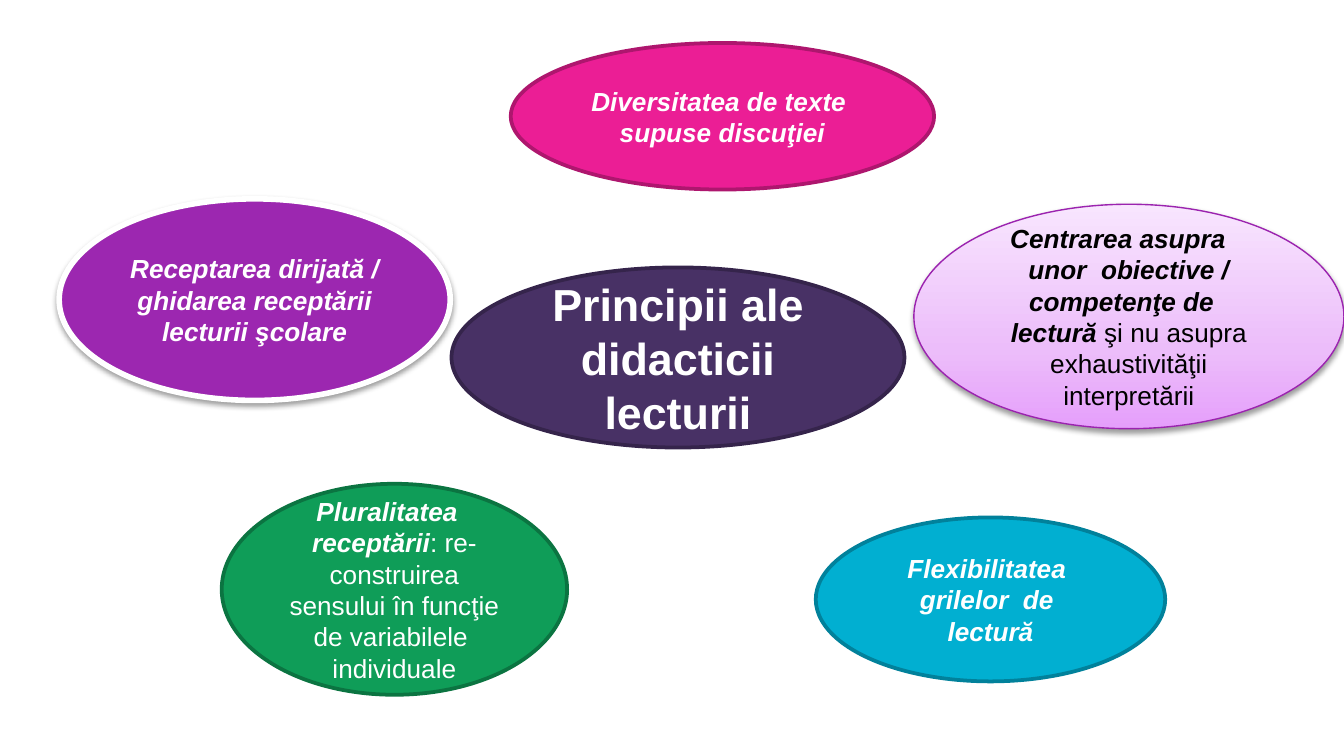
from copy import deepcopy

from pptx import Presentation
from pptx.dml.color import RGBColor
from pptx.enum.shapes import MSO_SHAPE as Shape
from pptx.enum.text import MSO_ANCHOR as Anchor, PP_ALIGN as Align
from pptx.oxml import parse_xml
from pptx.oxml.ns import nsdecls, qn
from pptx.util import Inches, Pt


def color(value):
    return RGBColor.from_string(value)


def write(para, text, size=14, ink="FFFFFF", bold=False, italic=False, font="Arial"):
    span = para.add_run()
    span.text = text
    span.font.name = font
    span.font.size = Pt(size)
    span.font.bold = bold
    span.font.italic = italic
    span.font.color.rgb = color(ink)


def fill_gradient(shape, stops, angle):
    """Fill with (position, colour) stops; the angle runs counter-clockwise."""
    shape.fill.gradient()
    shape.fill.gradient_angle = angle
    stop_list = shape._element.spPr.find(qn("a:gradFill")).find(qn("a:gsLst"))
    while len(stop_list) < len(stops):
        stop_list.append(deepcopy(stop_list[0]))
    for stop, (position, value) in zip(shape.fill.gradient_stops, stops):
        stop.position = position
        stop.color.rgb = color(value)


def drop_shadow(shape):
    effects = shape._element.spPr.find(qn("a:effectLst"))
    effects.append(parse_xml(
        f'<a:outerShdw {nsdecls("a")} blurRad="{Pt(3.1)}" dist="{Pt(1.6)}" '
        'dir="5400000" rotWithShape="0"><a:srgbClr val="000000">'
        '<a:alpha val="38000"/></a:srgbClr></a:outerShdw>'))


class ConceptMap:
    """Holds the text style and the page that receives the bubbles."""

    def __init__(self, page, size=14):
        self.page = page
        self.size = size

    def bubble(self, place, fill, line, lead, rest="", width=2, ink="FFFFFF",
               size=None, italic=True, shadow=False):
        """Draw an ellipse with a bold lead and an optional plain ending."""
        oval = self.page.shapes.add_shape(Shape.OVAL, *map(Inches, place))
        oval.shadow.inherit = False
        if isinstance(fill, str):
            oval.fill.solid()
            oval.fill.fore_color.rgb = color(fill)
        else:
            fill_gradient(oval, fill, 90)
        oval.line.color.rgb = color(line)
        oval.line.width = Pt(width)
        if shadow:
            drop_shadow(oval)

        frame = oval.text_frame
        frame.word_wrap = True
        frame.vertical_anchor = Anchor.MIDDLE
        para = frame.paragraphs[0]
        para.alignment = Align.CENTER
        size = size or self.size
        write(para, lead, size=size, ink=ink, bold=True, italic=italic)
        if rest:
            write(para, rest, size=size, ink=ink)


def main():
    deck = Presentation()
    deck.slide_width = Inches(10)
    deck.slide_height = Inches(10) * 9 // 16
    principles = ConceptMap(deck.slides.add_slide(deck.slide_layouts[6]))

    principles.bubble((3.8, 0.32, 3.15, 1.09), "EB1E95", "AE166E",
                      "Diversitatea de texte  supuse discuţiei")
    principles.bubble((1.65, 3.6, 2.57, 1.57), "0F9D58", "0B7441",
                      "Pluralitatea   receptării",
                      ": re-construirea sensului în funcţie de variabilele  individuale")
    lilac = [(0, "E59FFB"), (0.35, "ECBDFA"), (1, "F8E5FE")]
    principles.bubble((6.8, 1.52, 3.2, 1.67), lilac, "9B23AF",
                      "Centrarea asupra    unor  obiective / competenţe de   lectură ",
                      "şi nu asupra exhaustivităţii interpretării",
                      width=0.75, ink="000000", shadow=True)
    principles.bubble((6.07, 3.85, 2.6, 1.22), "01AFD1", "01819B",
                      "Flexibilitatea  grilelor  de  lectură")
    principles.bubble((0.44, 1.48, 2.91, 1.5), "9C27B0", "FFFFFF",
                      "Receptarea dirijată / ghidarea receptării lecturii şcolare",
                      width=3, shadow=True)
    principles.bubble((3.36, 1.99, 3.37, 1.34), "483165", "35244B",
                      "Principii ale didacticii lecturii", size=24, italic=False)

    deck.save("out.pptx")


if __name__ == "__main__":
    main()
